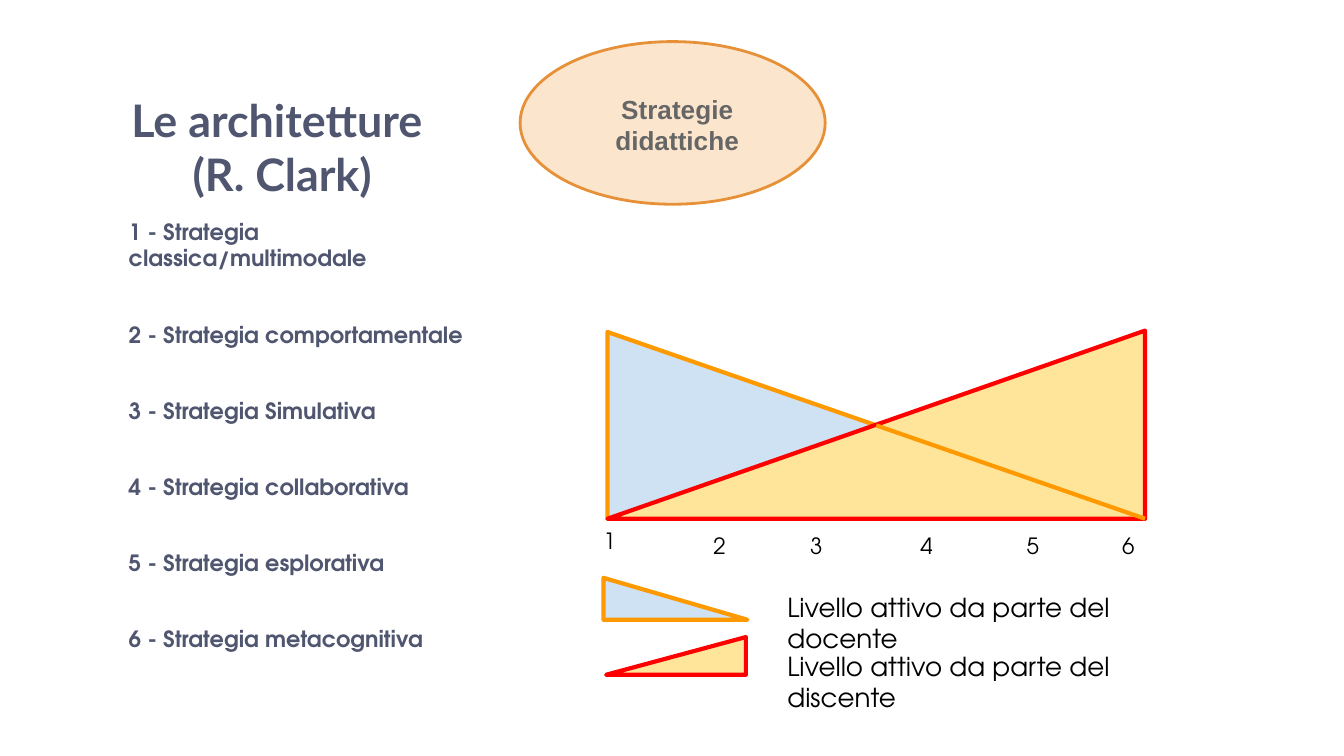
from lxml import etree
from pptx import Presentation
from pptx.dml.color import RGBColor
from pptx.enum.shapes import MSO_CONNECTOR, MSO_SHAPE as SHAPE
from pptx.enum.text import MSO_ANCHOR as ANCHOR, PP_ALIGN as ALIGN
from pptx.oxml.ns import qn
from pptx.util import Inches, Pt

INK, GREY, BLACK = "505670", "666666", "000000"
TEACHER = ("CFE2F3", "FF9900")
LEARNER = ("FFE599", "FF0000")
BODY_FONT = "TeX Gyre Adventor"
STRATEGIES = [
    "1 - Strategia classica/multimodale",
    "2 - Strategia comportamentale",
    "3 - Strategia Simulativa",
    "4 - Strategia collaborativa",
    "5 - Strategia esplorativa",
    "6 - Strategia metacognitiva",
]
# Left edge of each axis label, in inches from the chart's left edge
LABEL_OFFSETS = [-0.13, 0.69, 1.41, 2.23, 3.02, 3.73]


def color(hex_value):
    return RGBColor.from_string(hex_value)


def add_text(slide, box, lines, size, ink=BLACK, font=BODY_FONT, bold=False,
             align=ALIGN.LEFT, anchor=ANCHOR.TOP, gap=0):
    """Add one paragraph per line, with gap points between paragraphs."""
    tf = slide.shapes.add_textbox(*map(Inches, box)).text_frame
    tf.word_wrap = True
    tf.vertical_anchor = anchor
    tf.margin_left = tf.margin_right = Inches(0.1)
    tf.margin_top = tf.margin_bottom = Inches(0.1)
    for i, line in enumerate(lines):
        p = tf.add_paragraph() if i else tf.paragraphs[0]
        p.text = line
        p.alignment = align
        p.space_before = Pt(gap if i else 0)
        p.font.name, p.font.size, p.font.bold = font, Pt(size), bold
        p.font.color.rgb = color(ink)


def add_figure(slide, kind, box, colors, weight=2.25):
    sp = slide.shapes.add_shape(kind, *map(Inches, box))
    fill, line = colors
    sp.shadow.inherit = False
    sp.fill.solid()
    sp.fill.fore_color.rgb = color(fill)
    sp.line.color.rgb = color(line)
    sp.line.width = Pt(weight)
    return sp


def add_rising_triangle(slide, box, colors):
    """Fill box with a right triangle turned so that it grows to the right."""
    x, y, w, h = box
    turned = (x + (w - h) / 2, y + (h - w) / 2, h, w)
    add_figure(slide, SHAPE.RIGHT_TRIANGLE, turned, colors).rotation = 270


def add_topic(slide, box):
    x, y, w, h = box
    add_figure(slide, SHAPE.OVAL, box, ("FCE5CD", "E69138"), 1.5)
    add_text(slide, (x + 0.16 * w, y + 0.38 * h, 0.71 * w, 0.26 * h),
             ["Strategie didattiche"], 14, GREY, "Arial", True,
             ALIGN.CENTER, ANCHOR.MIDDLE)


def add_activity_chart(slide, box):
    x, y, w, h = box
    add_figure(slide, SHAPE.RIGHT_TRIANGLE, box, TEACHER)
    add_rising_triangle(slide, (x, y - 0.01, w, h + 0.01), LEARNER)
    # The teacher's edge stays visible across the learner's area
    edge = slide.shapes.add_connector(
        MSO_CONNECTOR.STRAIGHT,
        *map(Inches, (x + w / 2, y + h / 2, x + w, y + h)))
    edge.line.color.rgb = color(TEACHER[1])
    edge.line.width = Pt(2.25)
    etree.SubElement(edge._element.spPr, qn("a:effectLst"))
    for number, offset in enumerate(LABEL_OFFSETS, 1):
        top = y + h - (0.04 if number == 1 else 0)
        add_text(slide, (x + offset, top, 0.42, 0.44), [str(number)], 12)


def add_legend(slide, box):
    x, y, w, h = box
    text_x, text_w = x + 1.27, w - 1.27
    add_figure(slide, SHAPE.RIGHT_TRIANGLE, (x, y, 0.23 * w, 0.3 * h), TEACHER)
    add_rising_triangle(slide, (x + 0.02, y + 0.44, 1.04, 0.27 * h), LEARNER)
    for top, who in ((y, "docente"), (y + 0.44, "discente")):
        add_text(slide, (text_x, top, text_w, 0.6),
                 [f"Livello attivo da parte del {who}"], 14)


def main():
    prs = Presentation()
    prs.slide_width, prs.slide_height = Inches(10), Inches(10 * 9 / 16)
    slide = prs.slides.add_slide(prs.slide_layouts[6])
    add_text(slide, (0.34, 0.61, 3.52, 0.98),
             ["Le architetture ", "(R. Clark)"], 24, INK, "Lato", True,
             ALIGN.CENTER, ANCHOR.BOTTOM)
    add_text(slide, (0.86, 1.52, 2.84, 3.48), STRATEGIES, 12, INK,
             bold=True, gap=26.4)
    add_topic(slide, (3.87, 0.31, 2.27, 1.21))
    add_activity_chart(slide, (4.52, 2.47, 4, 1.39))
    add_legend(slide, (4.49, 4.3, 4.66, 1.04))
    prs.save("out.pptx")


if __name__ == "__main__":
    main()
